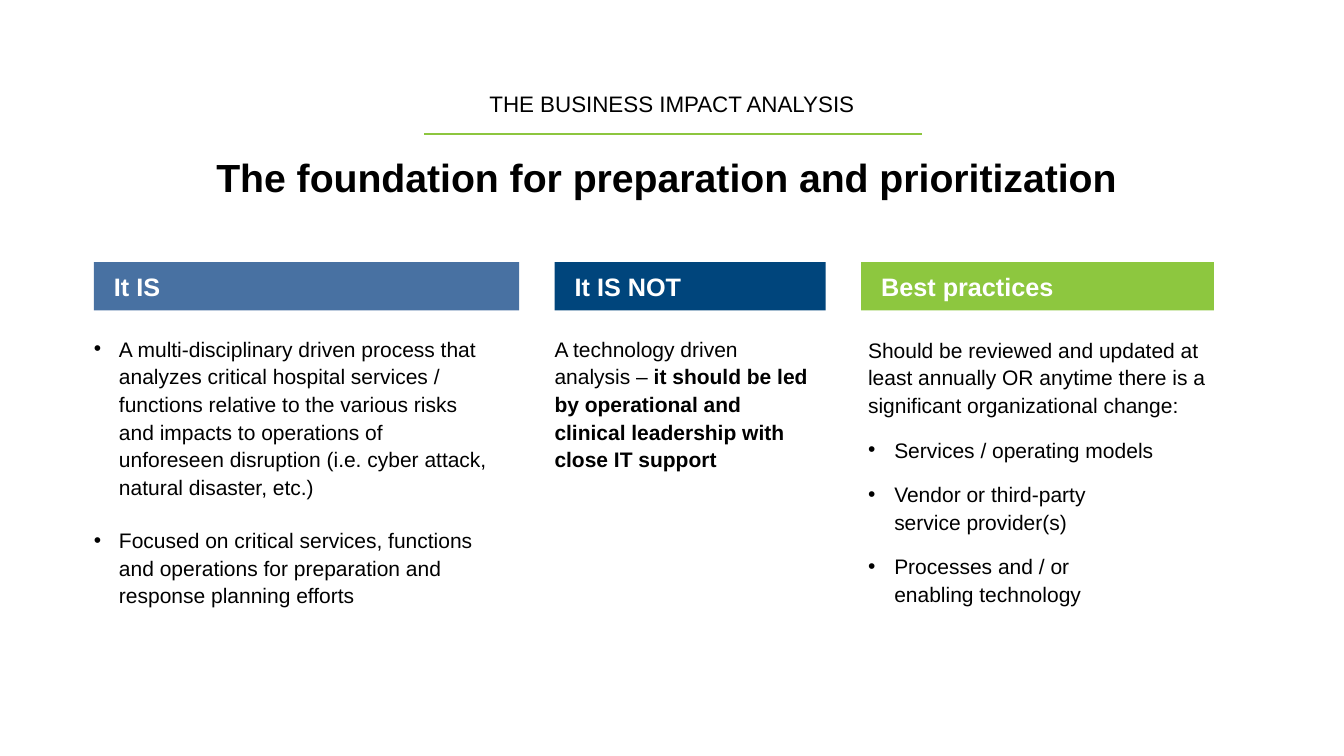
"""Build the business impact analysis slide with three headed columns."""
import pptx
import pptx.dml.color
import pptx.enum.shapes
import pptx.enum.text
import pptx.oxml.ns
import pptx.util
from lxml import etree

WIDTH, HEIGHT = 13.33, 7.5
FONT, BLACK, WHITE = "Arial", "000000", "FFFFFF"
TITLE = "THE BUSINESS IMPACT ANALYSIS"
HEADLINE = "The foundation for preparation and prioritization "
TITLE_TOP, HEADLINE_TOP, HEADLINE_HEIGHT = 0.92, 1.57, 0.55
RULE_LEFT, RULE_RIGHT, RULE_TOP, RULE_COLOR = 4.21, 9.14, 1.33, "8DC63F"
HEADER_TOP, HEADER_HEIGHT, HEADER_INSET = 2.6, 0.48, 0.2

COLUMNS = [
    {
        "heading": "It IS", "color": "4871A2", "left": 0.93, "width": 4.22,
        "body": (0.93, 3.31, 3.91, 3.01), "space": 18, "indent": 0.25,
        "paragraphs": [
            (True, [("A multi-disciplinary driven process that analyzes critical hospital "
                     "services / functions relative to the various risks and impacts to "
                     "operations of unforeseen disruption (i.e. cyber attack, natural "
                     "disaster, etc.)", False)]),
            (True, [("Focused on critical services, functions and operations for "
                     "preparation and response planning efforts", False)]),
        ],
    },
    {
        "heading": "It IS NOT", "color": "00457C", "left": 5.5, "width": 2.69,
        "body": (5.5, 3.31, 2.6, 1.93), "space": 6, "indent": 0,
        "paragraphs": [
            (False, [("A technology driven analysis –", False),
                     (" it should be led by operational and clinical leadership with "
                      "close IT support", True)]),
        ],
    },
    {
        "heading": "Best practices", "color": "8DC73F", "left": 8.54, "width": 3.5,
        "body": (8.61, 3.32, 3.5, 2.74), "space": 12, "indent": 0.26,
        "paragraphs": [
            (False, [("Should be reviewed and updated at least annually OR anytime there "
                      "is a significant organizational change:", False)]),
            (True, [("Services / operating models", False)]),
            (True, [("Vendor or third-party \nservice provider(s)", False)]),
            (True, [("Processes and / or \nenabling technology", False)]),
        ],
    },
]


def rgb(value):
    return pptx.dml.color.RGBColor.from_string(value)


def inches(*values):
    return [pptx.util.Inches(value) for value in values]


def prepare_frame(shape, inset=0, anchor=pptx.enum.text.MSO_ANCHOR.TOP):
    frame = shape.text_frame
    frame.word_wrap = True
    frame.auto_size = pptx.enum.text.MSO_AUTO_SIZE.NONE
    frame.vertical_anchor = anchor
    frame.margin_left = frame.margin_right = pptx.util.Inches(inset)
    frame.margin_top = frame.margin_bottom = pptx.util.Inches(inset)
    return frame


def add_text(paragraph, text, size, color=BLACK, bold=False):
    for index, line in enumerate(text.split("\n")):
        if index:
            paragraph.add_line_break()
        run = paragraph.add_run()
        run.text = line
        run.font.name = FONT
        run.font.size = pptx.util.Pt(size)
        run.font.bold = bold
        run.font.color.rgb = rgb(color)


def add_bullet(paragraph, indent):
    properties = paragraph._p.get_or_add_pPr()
    distance = pptx.util.Inches(indent)
    properties.set("marL", str(distance))
    properties.set("indent", str(-distance))
    font = etree.SubElement(properties, pptx.oxml.ns.qn("a:buFont"))
    font.set("typeface", FONT)
    bullet = etree.SubElement(properties, pptx.oxml.ns.qn("a:buChar"))
    bullet.set("char", "•")


def fill_heading(shape, text, size, bold):
    paragraph = prepare_frame(shape).paragraphs[0]
    paragraph.alignment = pptx.enum.text.PP_ALIGN.CENTER
    paragraph.line_spacing = 0.9
    add_text(paragraph, text, size, bold=bold)


def add_rule(slide):
    rule = slide.shapes.add_connector(
        pptx.enum.shapes.MSO_CONNECTOR.STRAIGHT,
        *inches(RULE_LEFT, RULE_TOP, RULE_RIGHT, RULE_TOP))
    rule.line.color.rgb = rgb(RULE_COLOR)
    rule.line.width = pptx.util.Pt(1.5)
    etree.SubElement(rule._element.spPr, pptx.oxml.ns.qn("a:effectLst"))


def add_column(slide, column):
    header = slide.shapes.add_shape(
        pptx.enum.shapes.MSO_SHAPE.RECTANGLE,
        *inches(column["left"], HEADER_TOP, column["width"], HEADER_HEIGHT))
    header.shadow.inherit = False
    header.fill.solid()
    header.fill.fore_color.rgb = rgb(column["color"])
    header.line.fill.background()
    frame = prepare_frame(header, HEADER_INSET, pptx.enum.text.MSO_ANCHOR.MIDDLE)
    frame.paragraphs[0].alignment = pptx.enum.text.PP_ALIGN.LEFT
    add_text(frame.paragraphs[0], column["heading"], 18, WHITE, True)

    body = prepare_frame(slide.shapes.add_textbox(*inches(*column["body"])))
    for index, (bulleted, runs) in enumerate(column["paragraphs"]):
        paragraph = body.add_paragraph() if index else body.paragraphs[0]
        paragraph.line_spacing = 1.1
        paragraph.space_after = pptx.util.Pt(column["space"])
        if bulleted:
            add_bullet(paragraph, column["indent"])
        for text, bold in runs:
            add_text(paragraph, text, 15, bold=bold)


def main():
    presentation = pptx.Presentation()
    presentation.slide_width, presentation.slide_height = inches(WIDTH, HEIGHT)
    slide = presentation.slides.add_slide(presentation.slide_layouts[5])
    title = slide.shapes.title
    title.left, title.top, title.width, title.height = inches(
        0, TITLE_TOP, WIDTH, HEADLINE_HEIGHT)
    fill_heading(title, TITLE, 16, False)
    headline = slide.shapes.add_textbox(*inches(0, HEADLINE_TOP, WIDTH, HEADLINE_HEIGHT))
    fill_heading(headline, HEADLINE, 28, True)
    add_rule(slide)
    for column in COLUMNS:
        add_column(slide, column)
    presentation.save("out.pptx")


if __name__ == "__main__":
    main()
